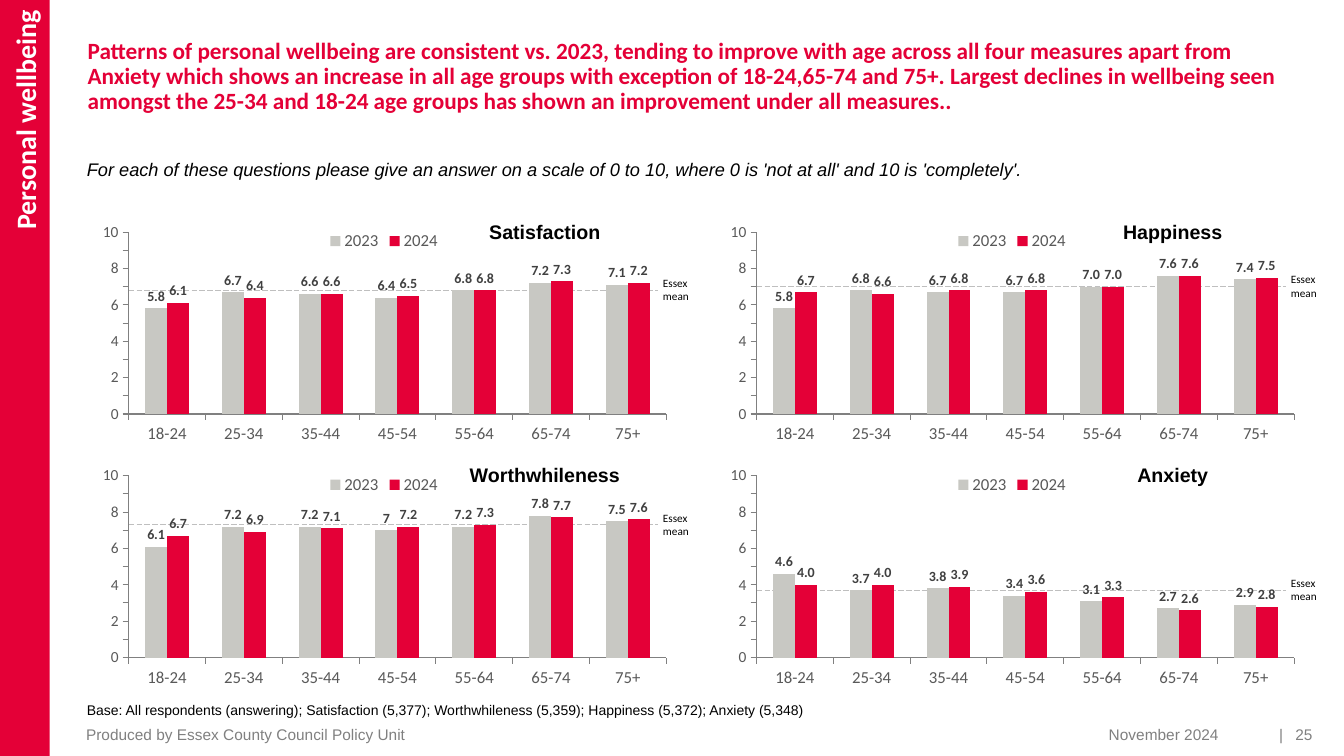
from lxml import etree
from pptx import Presentation
from pptx.chart.data import CategoryChartData
from pptx.dml.color import RGBColor
from pptx.enum.chart import XL_CHART_TYPE, XL_LABEL_POSITION, XL_LEGEND_POSITION, XL_TICK_MARK
from pptx.enum.dml import MSO_LINE
from pptx.enum.shapes import MSO_CONNECTOR, MSO_SHAPE
from pptx.enum.text import MSO_ANCHOR, PP_ALIGN
from pptx.oxml import parse_xml
from pptx.oxml.ns import nsdecls, qn
from pptx.util import Pt

COLUMNS = XL_CHART_TYPE.COLUMN_CLUSTERED
OUTSIDE = XL_LABEL_POSITION.OUTSIDE_END
TOP_KEY = XL_LEGEND_POSITION.TOP
TICK_OUT, TICK_NONE = XL_TICK_MARK.OUTSIDE, XL_TICK_MARK.NONE
LEFT, MID, RIGHT = PP_ALIGN.LEFT, PP_ALIGN.CENTER, PP_ALIGN.RIGHT
TOP, MIDDLE = MSO_ANCHOR.TOP, MSO_ANCHOR.MIDDLE

COLOURS = {"red": "E40037", "stone": "C8C8C3", "grey": "808080", "dash": "BFBFBF",
           "axis": "595959", "label": "404040", "black": "000000", "white": "FFFFFF"}
AGES = ["18-24", "25-34", "35-44", "45-54", "55-64", "65-74", "75+"]
ONE, PLAIN = "#,##0.0", "General"
CHART_W, CHART_H = 414.7, 162.7
PLOT = {"x": 0.06, "y": 0.054, "w": 0.926, "h": 0.799}
SCALE = 10

# Each panel: title, column, row, Essex mean, then values and label format by year
PANELS = [
    ("Satisfaction", 0, 0, 6.8,
     {"2023": ([5.8, 6.7, 6.6, 6.4, 6.8, 7.2, 7.1], PLAIN),
      "2024": ([6.1, 6.4, 6.6, 6.5, 6.8, 7.3, 7.2], PLAIN)}),
    ("Happiness", 1, 0, 7.0,
     {"2023": ([5.8, 6.8, 6.7, 6.7, 7, 7.6, 7.4], ONE),
      "2024": ([6.7, 6.6, 6.8, 6.8, 7, 7.6, 7.5], ONE)}),
    ("Worthwhileness", 0, 1, 7.3,
     {"2023": ([6.1, 7.2, 7.2, 7, 7.2, 7.8, 7.5], PLAIN),
      "2024": ([6.7, 6.9, 7.1, 7.2, 7.3, 7.7, 7.6], ONE)}),
    ("Anxiety", 1, 1, 3.7,
     {"2023": ([4.6, 3.7, 3.8, 3.4, 3.1, 2.7, 2.9], ONE),
      "2024": ([4, 4, 3.9, 3.6, 3.3, 2.6, 2.8], ONE)}),
]


def tint(name):
    return RGBColor.from_string(COLOURS[name])


def style(font, size, colour, bold=False, italic=False, face="Calibri"):
    font.size, font.name = Pt(size), face
    font.bold, font.italic = bold, italic
    font.color.rgb = tint(colour)


def write(shape, text, align=LEFT, anchor=TOP, inset=(7.2, 3.6, 7.2, 3.6), space=None, **look):
    frame = shape.text_frame
    frame.word_wrap, frame.vertical_anchor = True, anchor
    frame.margin_left, frame.margin_top, frame.margin_right, frame.margin_bottom = map(Pt, inset)
    para = frame.paragraphs[0]
    para.alignment, para.line_spacing = align, space
    run = para.add_run()
    run.text = text
    style(run.font, **look)


def add_text(slide, box, text, **look):
    write(slide.shapes.add_textbox(*map(Pt, box)), text, **look)


def add_side(slide, box):
    bar = slide.shapes.add_shape(MSO_SHAPE.RECTANGLE, *map(Pt, box))
    bar.shadow.inherit = False
    bar.fill.solid()
    bar.fill.fore_color.rgb = tint("red")
    bar.line.fill.background()
    write(bar, "Personal wellbeing", align=RIGHT, anchor=MIDDLE, inset=(7.2, 7.2, 7.2, 3.6),
          size=20, colour="white", bold=True)
    bar.text_frame._txBody.bodyPr.set("vert", "vert270")


def add_head(slide, box):
    x, y, w = box
    add_text(slide, (x + 0.5, y, w, 65),
             "Patterns of personal wellbeing are consistent vs. 2023, tending to improve with age "
             "across all four measures apart from Anxiety which shows an increase in all age groups "
             "with exception of 18-24,65-74 and 75+. Largest declines in wellbeing seen amongst the "
             "25-34 and 18-24 age groups has shown an improvement under all measures..",
             inset=(7.2, 3.6, 7.2, 0), space=0.9, size=16.6, colour="red", bold=True)
    add_text(slide, (x, y + 85, 799, 23),
             "For each of these questions please give an answer on a scale of 0 to 10, "
             "where 0 is 'not at all' and 10 is 'completely'.",
             size=13, colour="black", italic=True, face="Arial")


def add_foot(slide, box):
    x, y, w = box
    add_text(slide, (x, y, 675, 19.4),
             "Base: All respondents (answering); Satisfaction (5,377); Worthwhileness (5,359); "
             "Happiness (5,372); Anxiety (5,348)", size=10, colour="black", face="Arial")
    end = x + w
    parts = [("Produced by Essex County Council Policy Unit", x, 471, LEFT, 6.5),
             ("November 2024", end - 240, 173, RIGHT, 0),
             ("|", end - 61, 40, RIGHT, 0),
             ("25", end - 21, 21, RIGHT, 0)]
    for text, left, wide, align, pad in parts:
        add_text(slide, (left, y + 21.6, wide, 10.8), text, align=align, anchor=MIDDLE,
                 inset=(pad, 3.6, 0, 3.6), size=11, colour="grey", face="Arial")


def add_mean(slide, box, mean):
    """Dashed line at the mean, and its label at the right end."""
    x, y, _, h = box
    level = y + h * (PLOT["y"] + PLOT["h"] * (1 - mean / SCALE))
    rule = slide.shapes.add_connector(MSO_CONNECTOR.STRAIGHT, *map(Pt, (x + 25, level, x + 403, level)))
    rule.line.color.rgb = tint("dash")
    rule.line.width = Pt(0.5)
    rule.line.dash_style = MSO_LINE.LONG_DASH
    etree.SubElement(rule._element.spPr, qn("a:effectLst"))
    add_text(slide, (x + 399.5, level - 13.5, 52, 26.6), "Essex mean", size=8, colour="black")


def clear(chart):
    """Fix the plot box and leave chart and plot unfilled, so the mean line shows."""
    def bare():
        return parse_xml(f'<c:spPr {nsdecls("c", "a")}><a:noFill/><a:ln><a:noFill/></a:ln></c:spPr>')
    root = chart.element.find(qn("c:chart"))
    root.addnext(bare())
    area = root.find(qn("c:plotArea"))
    for old in area.findall(qn("c:layout")):
        area.remove(old)
    sizes = "".join(f'<c:{key} val="{val}"/>' for key, val in PLOT.items())
    area.insert(0, parse_xml(
        f'<c:layout {nsdecls("c")}><c:manualLayout><c:layoutTarget val="inner"/>'
        f'<c:xMode val="edge"/><c:yMode val="edge"/>{sizes}</c:manualLayout></c:layout>'))
    area.append(bare())


def add_bars(slide, box, years):
    data = CategoryChartData()
    data.categories = AGES
    for year, (vals, _) in years.items():
        data.add_series(year, vals)
    chart = slide.shapes.add_chart(COLUMNS, *map(Pt, box), data).chart
    chart.has_title = False
    style(chart.font, 10, "black")
    chart.has_legend = True
    chart.legend.position = TOP_KEY
    chart.legend.include_in_layout = False
    style(chart.legend.font, 12, "axis")
    # Axes
    for axis, size in ((chart.category_axis, 12), (chart.value_axis, 11)):
        axis.has_major_gridlines = False
        axis.major_tick_mark, axis.minor_tick_mark = TICK_OUT, TICK_NONE
        axis.format.line.color.rgb = tint("grey")
        axis.format.line.width = Pt(0.75)
        style(axis.tick_labels.font, size, "axis")
    axis = chart.value_axis
    axis.minimum_scale, axis.maximum_scale, axis.major_unit = 0, SCALE, 1
    axis.tick_labels.number_format = "#,##0"
    axis.tick_labels.number_format_is_linked = False
    # Columns and their labels
    plot = chart.plots[0]
    plot.gap_width, plot.overlap, plot.vary_by_categories = 150, 0, False
    for bars, colour, (_, form) in zip(plot.series, ("stone", "red"), years.values()):
        bars.format.fill.solid()
        bars.format.fill.fore_color.rgb = tint(colour)
        marks = bars.data_labels
        marks.show_value, marks.position = True, OUTSIDE
        marks.number_format, marks.number_format_is_linked = form, False
        style(marks.font, 10, "label", bold=True)
    clear(chart)


def add_panel(slide, box, title, mean, years):
    x, y = box[:2]
    add_mean(slide, box, mean)
    add_bars(slide, box, years)
    add_text(slide, (x + 236.5, y - 3.6, 171.4, 24.5), title, align=MID,
             size=14, colour="black", bold=True, face="Arial")


def main():
    deck = Presentation()
    deck.slide_width, deck.slide_height = Pt(960), Pt(540)
    slide = deck.slides.add_slide(deck.slide_layouts[6])
    for title, col, row, mean, years in PANELS:
        box = (67 + col * 448.5, 157 + row * 174, CHART_W, CHART_H)
        add_panel(slide, box, title, mean, years)
    add_side(slide, (0, 0, 35.5, 540))
    add_head(slide, (55, 24.5, 882))
    add_foot(slide, (55, 497.5, 882.5))
    deck.save("out.pptx")


if __name__ == "__main__":
    main()
